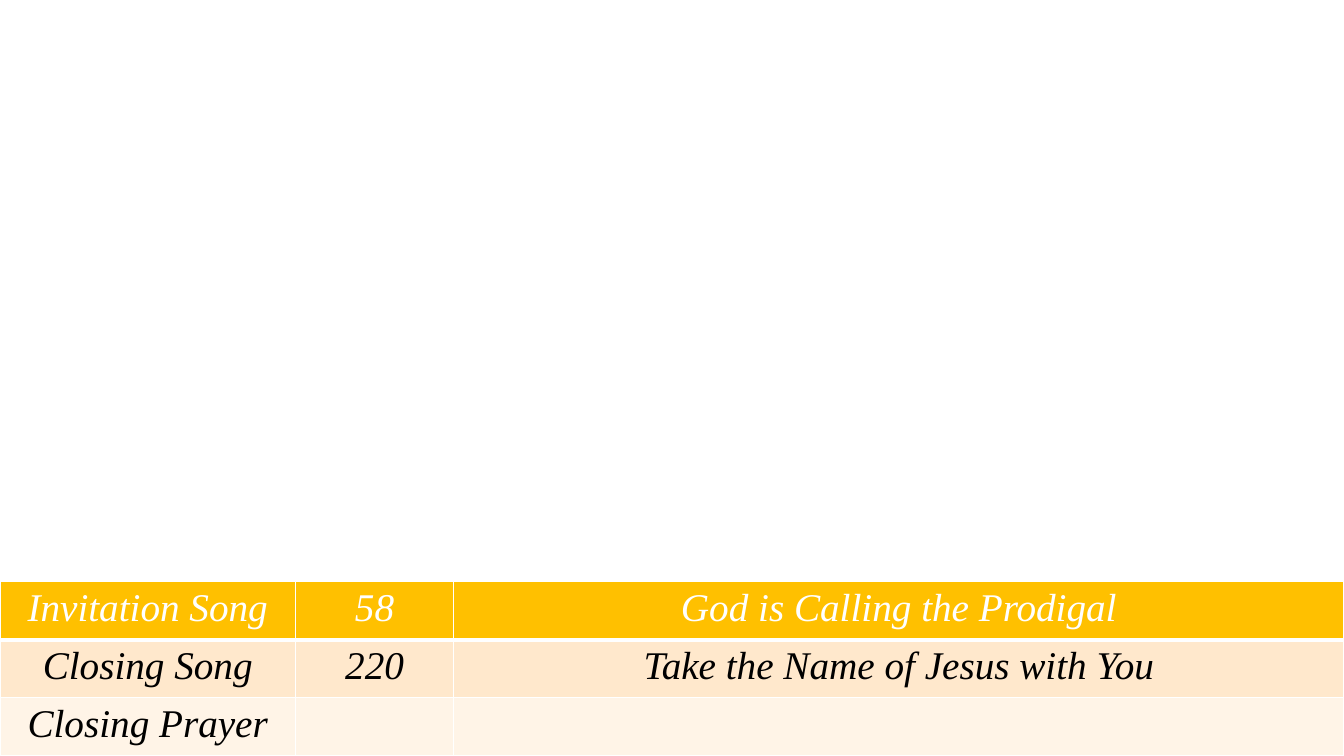
from lxml import etree
from pptx import Presentation
from pptx.dml.color import RGBColor
from pptx.enum.text import PP_ALIGN
from pptx.oxml.ns import qn
from pptx.util import Inches, Pt

COLORS = {
    "header": "FFC000",
    "band_dark": "FFE8CC",
    "band_light": "FFF4E7",
    "white": "FFFFFF",
    "black": "000000",
}
FONT = "Times New Roman"
COLUMN_WIDTHS = (2.93, 1.57, 8.83)
SERVICE_ORDER = (
    ("Invitation Song", "58", "God is Calling the Prodigal"),
    ("Closing Song", "220", "Take the Name of Jesus with You"),
    ("Closing Prayer", "", ""),
)


def write_text(frame, text, size=28, color="black", italic=True, bold=False,
               align=PP_ALIGN.CENTER):
    paragraph = frame.paragraphs[0]
    paragraph.alignment = align
    paragraph.font.size = Pt(size)
    if not text:
        return
    run = paragraph.add_run()
    run.text = text
    run.font.name = FONT
    run.font.size = Pt(size)
    run.font.italic = italic
    run.font.bold = bold
    run.font.color.rgb = RGBColor.from_string(COLORS[color])


def set_borders(cell, bottom=1):
    properties = cell._tc.get_or_add_tcPr()
    widths = {"a:lnL": 1, "a:lnR": 1, "a:lnT": 1, "a:lnB": bottom}
    # Borders come before the fill in the cell properties
    for position, (side, width) in enumerate(widths.items()):
        line = etree.Element(qn(side), w=str(Pt(width)))
        fill = etree.SubElement(line, qn("a:solidFill"))
        etree.SubElement(fill, qn("a:srgbClr"), val=COLORS["white"])
        properties.insert(position, line)


def add_service_order(slide, left, top, width, height):
    frame = slide.shapes.add_table(
        len(SERVICE_ORDER), len(COLUMN_WIDTHS),
        Inches(left), Inches(top), Inches(width), Inches(height))
    table = frame.table
    for column, column_width in zip(table.columns, COLUMN_WIDTHS):
        column.width = Inches(column_width)

    # Header row, then alternating bands
    row_fills = ("header", "band_dark", "band_light")
    for row, (entries, row_fill) in enumerate(zip(SERVICE_ORDER, row_fills)):
        is_header = row == 0
        for column, entry in enumerate(entries):
            cell = table.cell(row, column)
            cell.fill.solid()
            cell.fill.fore_color.rgb = RGBColor.from_string(COLORS[row_fill])
            set_borders(cell, bottom=3 if is_header else 1)
            write_text(cell.text_frame, entry,
                       color="white" if is_header else "black")


def main():
    presentation = Presentation()
    presentation.slide_width = Inches(13.33)
    presentation.slide_height = Inches(7.5)
    slide = presentation.slides.add_slide(presentation.slide_layouts[6])
    # Order of service along the bottom edge
    add_service_order(slide, 0, 5.77, 13.33, 1.73)
    presentation.save("out.pptx")


if __name__ == "__main__":
    main()
